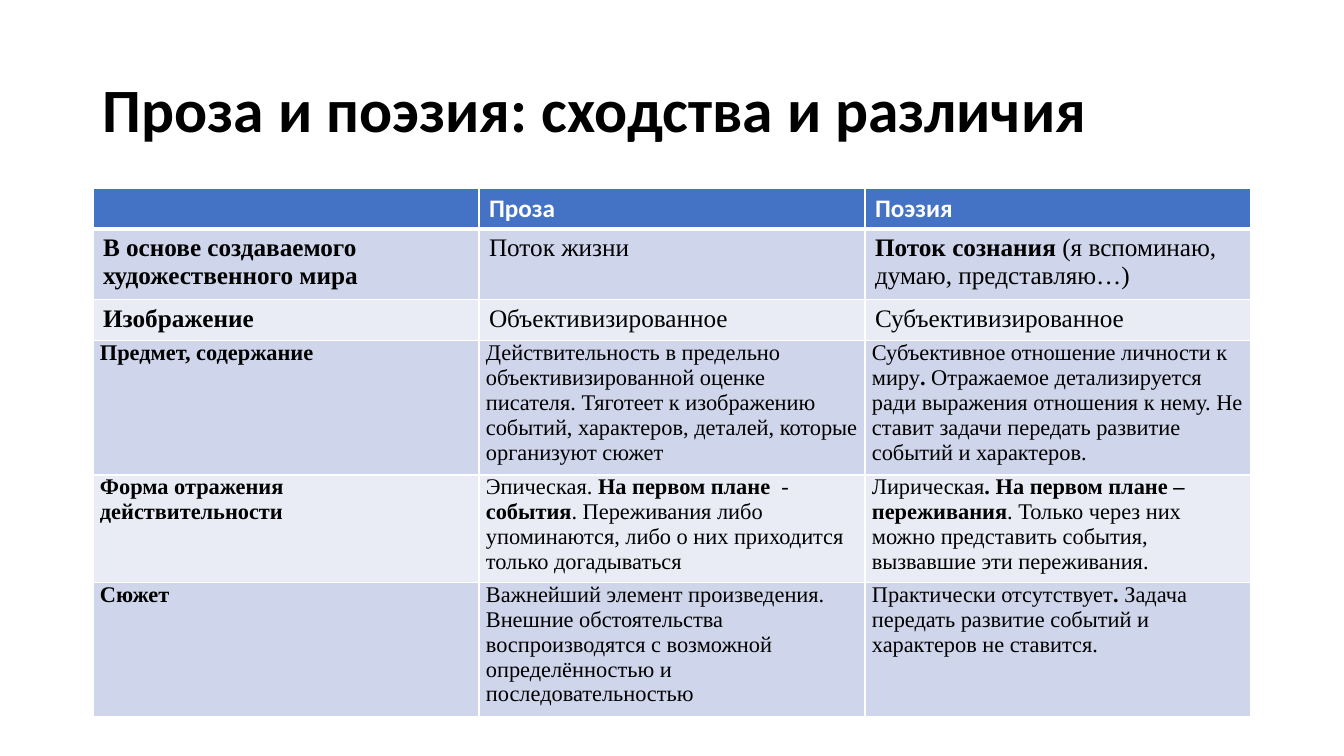
from dataclasses import dataclass

from lxml.etree import SubElement
from pptx import Presentation
from pptx.dml.color import RGBColor
from pptx.enum.text import MSO_ANCHOR
from pptx.oxml.ns import qn
from pptx.util import Emu, Pt

TITLE = "Проза и поэзия: сходства и различия"
HEADER = ["", "Проза", "Поэзия"]
# Text between asterisks is bold.
MAIN_ROWS = [
    ["*В основе создаваемого художественного мира*", "Поток жизни",
     "*Поток сознания* (я вспоминаю, думаю, представляю…)"],
    ["*Изображение*", "Объективизированное", "Субъективизированное"],
]
DETAIL_ROWS = [
    ["*Предмет, содержание*",
     "Действительность в предельно объективизированной оценке писателя. "
     "Тяготеет к изображению событий, характеров, деталей, которые организуют сюжет",
     "Субъективное отношение личности к миру*.* Отражаемое детализируется ради выражения "
     "отношения к нему. Не ставит задачи передать развитие событий и характеров."],
    ["*Форма отражения действительности*",
     "Эпическая. *На первом плане*  - *события*. Переживания либо упоминаются, "
     "либо о них приходится только догадываться",
     "Лирическая*. На первом плане – переживания*. Только через них можно представить "
     "события, вызвавшие эти переживания."],
    ["*Сюжет*",
     "Важнейший элемент произведения. Внешние обстоятельства воспроизводятся "
     "с возможной определённостью и последовательностью",
     "Практически отсутствует*. *Задача передать развитие событий и характеров не ставится."],
]
ROWS = [[f"*{name}*" if name else "" for name in HEADER]] + MAIN_ROWS + DETAIL_ROWS
ROW_HEIGHTS = [41, 65, 41, 125, 99, 125]
COLUMN_WIDTH = 386
TABLE_LEFT, TABLE_TOP = 93, 188
TITLE_BOX = (93, 40, 1159, 146)
DETAIL_MARGIN = 7


@dataclass(frozen=True)
class Theme:
    heading_font: str = "Calibri"
    body_font: str = "Times New Roman"
    title_size: int = 44
    main_size: int = 18
    detail_size: int = 16
    black: str = "000000"
    white: str = "FFFFFF"
    header_fill: str = "4472C4"
    band_fills: tuple = ("E9EBF5", "CFD5EA")


THEME = Theme()


def px(length):
    return Emu(round(length * 914400 / 100.8))


def add_runs(para, marked_text, font, size, color):
    """Add one run per stretch, bold between asterisks."""
    for index, part in enumerate(marked_text.split("*")):
        if part:
            span = para.add_run()
            span.text = part
            span.font.name = font
            span.font.size = Pt(size)
            span.font.bold = index % 2 == 1
            span.font.color.rgb = RGBColor.from_string(color)


def set_borders(cell, is_header):
    properties = cell._tc.get_or_add_tcPr()
    for index, side in enumerate(("lnL", "lnR", "lnT", "lnB")):
        width = 3 if is_header and side == "lnB" else 1
        line = SubElement(properties, qn(f"a:{side}"), w=str(Pt(width)))
        fill = SubElement(line, qn("a:solidFill"))
        SubElement(fill, qn("a:srgbClr"), val=THEME.white)
        properties.insert(index, line)


def add_title(page):
    box = page.shapes.add_textbox(*map(px, TITLE_BOX))
    frame = box.text_frame
    frame.word_wrap = True
    frame.vertical_anchor = MSO_ANCHOR.MIDDLE
    para = frame.paragraphs[0]
    para.line_spacing = 0.9
    add_runs(para, f"*{TITLE}*", THEME.heading_font, THEME.title_size, THEME.black)


def fill_cell(cell, text, row_index):
    is_header = row_index == 0
    is_detail = row_index > len(MAIN_ROWS)
    if is_detail:
        cell.margin_left = cell.margin_right = px(DETAIL_MARGIN)
        cell.margin_top = cell.margin_bottom = 0
    cell.fill.solid()
    cell.fill.fore_color.rgb = RGBColor.from_string(
        THEME.header_fill if is_header else THEME.band_fills[row_index % 2])
    set_borders(cell, is_header)
    add_runs(cell.text_frame.paragraphs[0], text,
             THEME.heading_font if is_header else THEME.body_font,
             THEME.detail_size if is_detail else THEME.main_size,
             THEME.white if is_header else THEME.black)


def add_comparison(page):
    columns = len(HEADER)
    table = page.shapes.add_table(
        len(ROWS), columns, px(TABLE_LEFT), px(TABLE_TOP),
        px(COLUMN_WIDTH * columns), px(sum(ROW_HEIGHTS))).table
    for column in table.columns:
        column.width = px(COLUMN_WIDTH)
    for row_index, texts in enumerate(ROWS):
        table.rows[row_index].height = px(ROW_HEIGHTS[row_index])
        for column_index, text in enumerate(texts):
            fill_cell(table.cell(row_index, column_index), text, row_index)


def main():
    deck = Presentation()
    deck.slide_width, deck.slide_height = px(1344), px(756)
    page = deck.slides.add_slide(deck.slide_layouts[6])
    add_title(page)
    add_comparison(page)
    deck.save("out.pptx")


if __name__ == "__main__":
    main()
